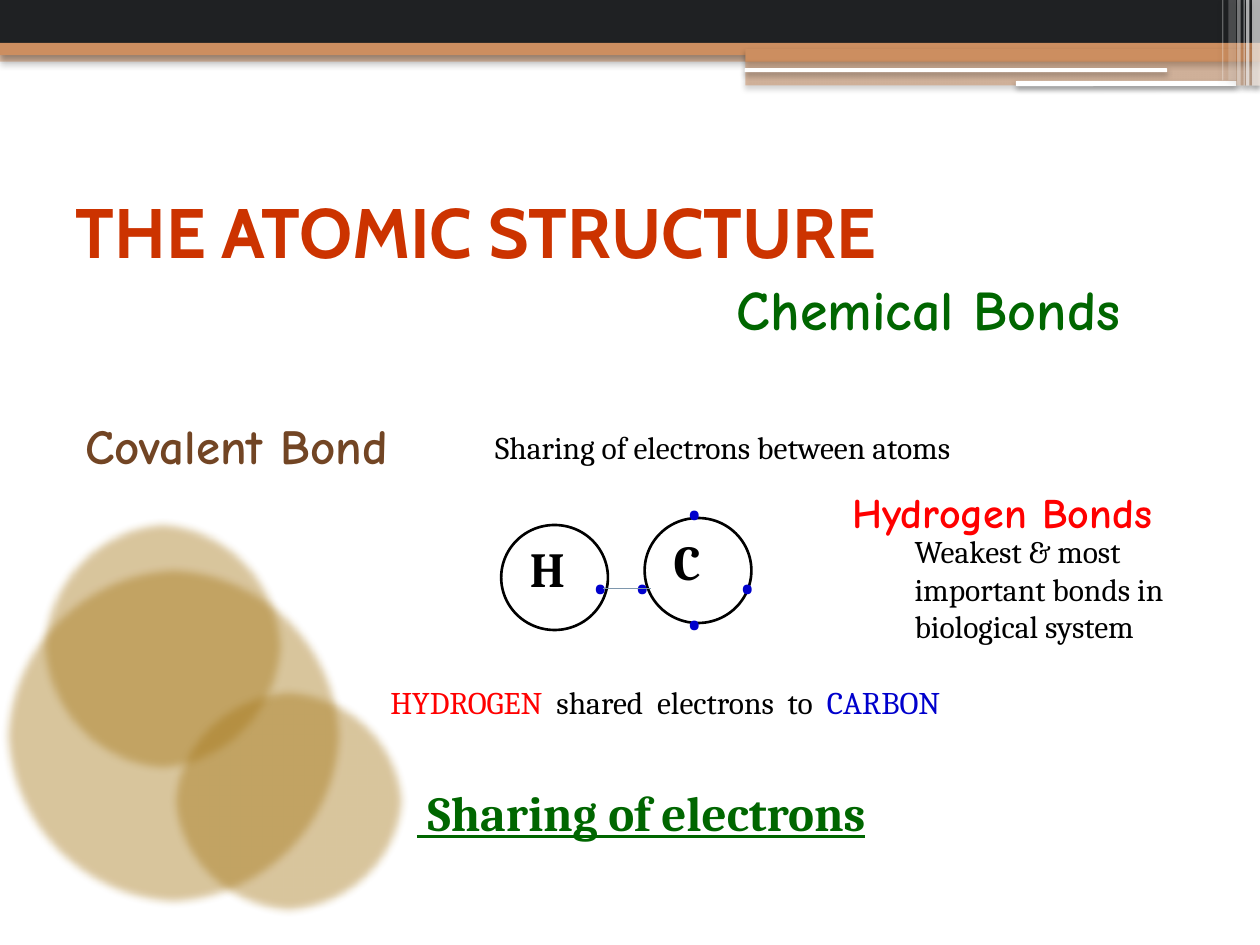
import pptx
import pptx.util
import pptx.dml.color
import pptx.enum.shapes
import pptx.enum.text
import pptx.oxml
import pptx.oxml.ns

Pt = pptx.util.Pt
RGBColor = pptx.dml.color.RGBColor
SHAPE = pptx.enum.shapes.MSO_SHAPE

WHITE = RGBColor(0xFF, 0xFF, 0xFF)
BLACK = RGBColor(0x00, 0x00, 0x00)
CHARCOAL = RGBColor(0x1F, 0x21, 0x23)
COPPER = RGBColor(0xCC, 0x8E, 0x60)
OCHRE = RGBColor(0xA5, 0x76, 0x17)
RUST = RGBColor(0xCC, 0x33, 0x00)
BROWN = RGBColor(0x72, 0x45, 0x24)
GREEN = RGBColor(0x00, 0x66, 0x00)
RED = RGBColor(0xFF, 0x00, 0x00)
BLUE = RGBColor(0x00, 0x00, 0xCC)
STEEL = RGBColor(0x7E, 0x97, 0xAD)

SERIF = "Cambria"
SANS = "Cabin"
HAND = "Comic Neue"


def add_effects(shape, content=""):
    namespace = pptx.oxml.ns.nsdecls("a")
    shape._element.spPr.append(pptx.oxml.parse_xml(
        f"<a:effectLst {namespace}>{content}</a:effectLst>"))


def add_filled(slide, kind, box, color, opacity=100):
    shape = slide.shapes.add_shape(kind, *map(Pt, box))
    shape.fill.solid()
    shape.fill.fore_color.rgb = color
    shape.line.fill.background()
    if opacity < 100:
        color_element = shape._element.spPr.find(".//" + pptx.oxml.ns.qn("a:srgbClr"))
        alpha = color_element.makeelement(
            pptx.oxml.ns.qn("a:alpha"), {"val": str(opacity * 1000)})
        color_element.append(alpha)
    return shape


def write_runs(frame, *runs, font=SERIF, size=18, bold=False, underline=False):
    paragraph = frame.paragraphs[0]
    paragraph.alignment = pptx.enum.text.PP_ALIGN.LEFT
    for text, color in runs:
        run = paragraph.add_run()
        run.text = text
        run.font.name = font
        run.font.size = Pt(size)
        run.font.bold = bold
        run.font.underline = underline
        run.font.color.rgb = color


def add_text(slide, box, *runs, **style):
    frame = slide.shapes.add_textbox(*map(Pt, box)).text_frame
    frame.word_wrap = True
    write_runs(frame, *runs, **style)


def add_banner(slide, box):
    left, top, width, _ = box
    bands = [
        (SHAPE.RECTANGLE, 0, 28.8, width, 6.5, COPPER, 50),
        (SHAPE.RECTANGLE, 0, 0, width, 24.5, CHARCOAL, 100),
        (SHAPE.RECTANGLE, 0, 24.5, width, 7, COPPER, 100),
        (SHAPE.RECTANGLE, 426, 28, 294, 7.2, COPPER, 100),
        (SHAPE.RECTANGLE, 426, 34.6, 294, 14.2, COPPER, 50),
        (SHAPE.ROUNDED_RECTANGLE, 425.5, 39, 241.5, 2.2, WHITE, 100),
        (SHAPE.ROUNDED_RECTANGLE, 580.5, 46.3, 126, 2.9, WHITE, 100),
    ]
    for kind, x, y, band_width, height, color, opacity in bands:
        add_filled(slide, kind, (left + x, top + y, band_width, height), color, opacity)
    stripes = [
        (715.5, 4.5, 49, 65), (712, 2, 49, 65), (710.6, 0.7, 49, 60),
        (707, 2, 49, 40), (702, 4.3, 46, 20), (698.4, 0.7, 46, 30),
    ]
    for x, stripe_width, height, opacity in stripes:
        add_filled(slide, SHAPE.RECTANGLE, (left + x, top, stripe_width, height),
                   WHITE, opacity)


def add_circles(slide, box):
    left, top, _, _ = box
    circles = [(0, 26, 198, 198), (96, 96, 138, 133), (21, 0, 144, 148)]
    for x, y, width, height in circles:
        circle = add_filled(slide, SHAPE.OVAL, (left + x, top + y, width, height), OCHRE, 42)
        add_effects(circle, '<a:softEdge rad="63500"/>')


def add_heading(slide, box):
    left, top, width, height = box
    title = slide.shapes.title
    title.left, title.top, title.width, title.height = map(Pt, (left, top, width, height))
    frame = title.text_frame
    frame.vertical_anchor = pptx.enum.text.MSO_ANCHOR.MIDDLE
    write_runs(frame, ("THE ATOMIC STRUCTURE", RUST), font=SANS, size=40, bold=True)
    add_text(slide, (left + 378, top + 63.4, 298, 46), ("Chemical Bonds", GREEN),
             font=HAND, size=32, bold=True)


def add_atom(slide, box, symbol, electrons):
    left, top, _, _ = box
    shell = slide.shapes.add_shape(SHAPE.OVAL, *map(Pt, box))
    shell.shadow.inherit = False
    shell.fill.background()
    shell.line.color.rgb = BLACK
    shell.line.width = Pt(1.5)
    add_text(slide, (left + 9.4, top + 4.3, 42, 41), (symbol, BLACK), size=28, bold=True)
    for x, y in electrons:
        add_text(slide, (left + x, top + y, 36, 51), (" .", BLUE), size=36, bold=True)


def add_molecule(slide, box):
    left, top, _, _ = box
    add_atom(slide, (left, top + 4, 61, 60), "H", [(37.5, 0)])
    add_atom(slide, (left + 82, top, 61, 60), "C",
             [(-20, 4), (9.4, -38), (9.4, 25), (39.6, 4)])
    bond = slide.shapes.add_connector(
        pptx.enum.shapes.MSO_CONNECTOR.STRAIGHT,
        *map(Pt, (left + 58.4, top + 40.2, left + 85.6, top + 40.2)))
    bond.line.color.rgb = STEEL
    bond.line.width = Pt(0.75)
    add_effects(bond)


def add_covalent(slide, box):
    left, top, _, _ = box
    add_text(slide, (left, top, 244, 41), ("Covalent Bond", BROWN),
             font=HAND, size=28, bold=True)
    add_text(slide, (left + 234, top + 7.2, 372, 29),
             ("Sharing of electrons between atoms", BLACK))
    add_molecule(slide, (left + 244.6, top + 62, 143, 64))
    add_text(slide, (left + 174.2, top + 152.6, 374, 29),
             ("HYDROGEN  ", RED), ("shared  electrons  to  ", BLACK), ("CARBON", BLUE))
    add_text(slide, (left + 189.3, top + 209.5, 315, 41), (" Sharing of electrons", GREEN),
             size=28, bold=True, underline=True)


def add_hydrogen(slide, box):
    left, top, width, _ = box
    add_text(slide, (left, top, width, 36), ("Hydrogen Bonds", RED),
             font=HAND, size=24, bold=True)
    add_text(slide, (left + 35.5, top + 26, 186.5, 73),
             ("Weakest & most important bonds in biological system", BLACK))


def main():
    deck = pptx.Presentation()
    deck.slide_width, deck.slide_height = Pt(720), Pt(540)
    slide = deck.slides.add_slide(deck.slide_layouts.get_by_name("Title Only"))
    add_banner(slide, (0, 0, 720, 49))
    add_circles(slide, (0, 295.2, 234, 229))
    add_heading(slide, (36, 90, 648, 84))
    add_covalent(slide, (41.8, 234, 606, 250))
    add_hydrogen(slide, (480, 274.3, 240, 99))
    deck.save("out.pptx")


if __name__ == "__main__":
    main()
